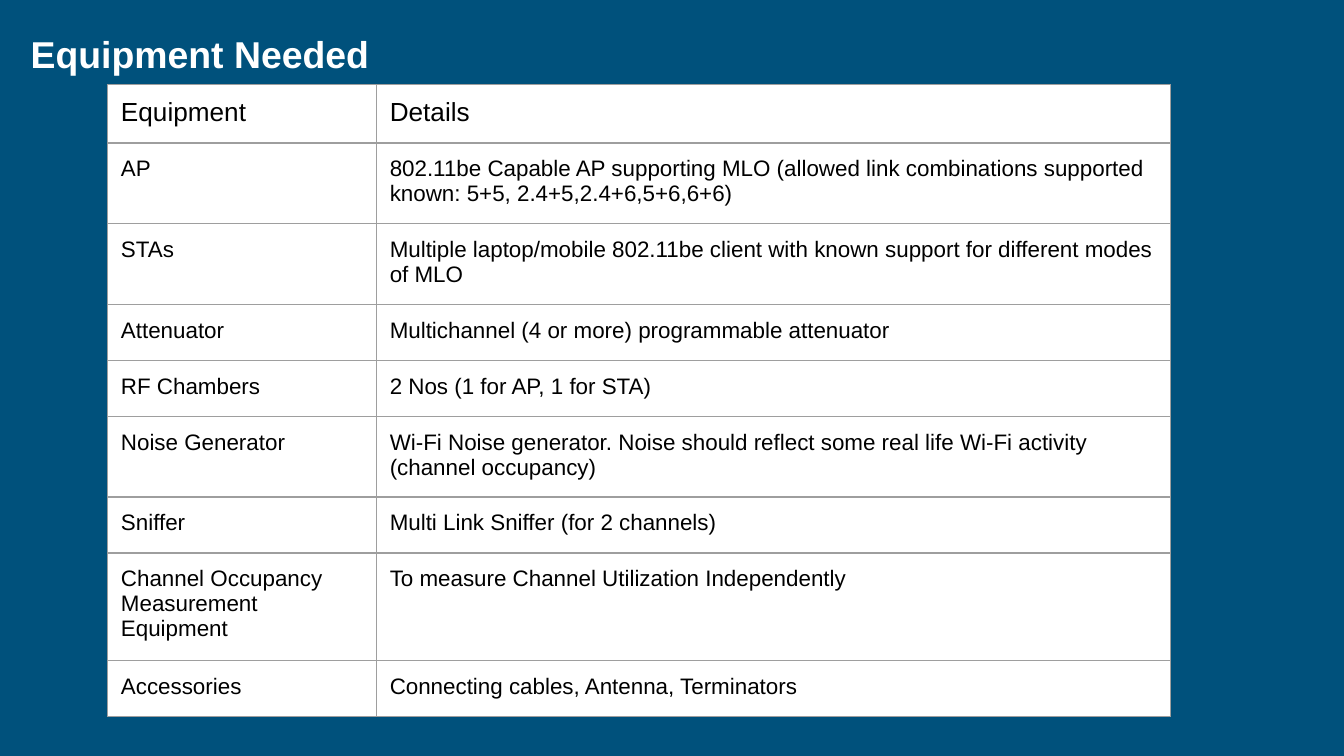
import pptx
import pptx.dml.color
import pptx.oxml
import pptx.oxml.ns
import pptx.util
from pptx.util import Inches

NAVY = pptx.dml.color.RGBColor(0x00, 0x51, 0x7C)
WHITE = pptx.dml.color.RGBColor(0xFF, 0xFF, 0xFF)
BLACK = pptx.dml.color.RGBColor(0x00, 0x00, 0x00)
GREY = pptx.dml.color.RGBColor(0x9E, 0x9E, 0x9E)

FONT = "Arial"
INSET = Inches(0.1)
ROW_HEIGHT = Inches(10 / 24)
COLUMN_WIDTHS = (2, 5.91)
EQUIPMENT = [
    ("Equipment", "Details"),
    ("AP", "802.11be Capable AP supporting MLO (allowed link combinations "
           "supported known: 5+5, 2.4+5,2.4+6,5+6,6+6)"),
    ("STAs", "Multiple laptop/mobile 802.11be client with known support for "
             "different modes of MLO"),
    ("Attenuator", "Multichannel (4 or more) programmable attenuator"),
    ("RF Chambers", "2 Nos (1 for AP, 1 for STA)"),
    ("Noise Generator", "Wi-Fi Noise generator. Noise should reflect some real "
                        "life Wi-Fi activity (channel occupancy)"),
    ("Sniffer", "Multi Link Sniffer (for 2 channels)"),
    ("Channel Occupancy Measurement Equipment",
     "To measure Channel Utilization Independently"),
    ("Accessories", "Connecting cables, Antenna, Terminators"),
]


def write_text(frame, text, size, color=BLACK, bold=False):
    frame.word_wrap = True
    span = frame.paragraphs[0].add_run()
    span.text = text
    span.font.name = FONT
    span.font.size = pptx.util.Pt(size)
    span.font.bold = bold
    span.font.color.rgb = color


def set_margins(holder):
    """Apply the common inset to a text frame or a table cell."""
    holder.margin_left = holder.margin_right = INSET
    holder.margin_top = holder.margin_bottom = INSET


def add_borders(cell, color, points):
    properties = cell._tc.get_or_add_tcPr()
    for position, side in enumerate(("lnL", "lnR", "lnT", "lnB")):
        line = pptx.oxml.parse_xml(
            f'<a:{side} {pptx.oxml.ns.nsdecls("a")} w="{pptx.util.Pt(points)}">'
            f'<a:solidFill><a:srgbClr val="{color}"/></a:solidFill></a:{side}>')
        properties.insert(position, line)


def add_title(page, left, top, width, height):
    box = page.shapes.add_textbox(
        Inches(left), Inches(top), Inches(width), Inches(height))
    set_margins(box.text_frame)
    write_text(box.text_frame, "Equipment Needed", size=20, color=WHITE, bold=True)


def add_equipment_table(page, left, top, width, height):
    """Rows and columns keep their own sizes and grow past the given box."""
    holder = page.shapes.add_table(
        len(EQUIPMENT), len(COLUMN_WIDTHS), Inches(left), Inches(top),
        Inches(width), Inches(height))
    table = holder.table
    table.horz_banding = False
    table.first_row = False
    for column, column_width in zip(table.columns, COLUMN_WIDTHS):
        column.width = Inches(column_width)
    for row_index, texts in enumerate(EQUIPMENT):
        table.rows[row_index].height = ROW_HEIGHT
        for column_index, text in enumerate(texts):
            cell = table.cell(row_index, column_index)
            set_margins(cell)
            cell.fill.solid()
            cell.fill.fore_color.rgb = WHITE
            add_borders(cell, GREY, points=0.75)
            write_text(cell.text_frame, text, size=14 if row_index == 0 else 12)
    # Resizing rows and columns stretches the holder, so its size is set last.
    holder.width, holder.height = Inches(width), Inches(height)


def main():
    deck = pptx.Presentation()
    deck.slide_width = Inches(10)
    deck.slide_height = Inches(10 * 9 / 16)
    page = deck.slides.add_slide(deck.slide_layouts[6])
    page.background.fill.solid()
    page.background.fill.fore_color.rgb = NAVY
    add_title(page, 0.13, 0.13, 9.73, 0.43)
    add_equipment_table(page, 0.8, 0.63, 3.28, 3.28)
    deck.save("out.pptx")


if __name__ == "__main__":
    main()
